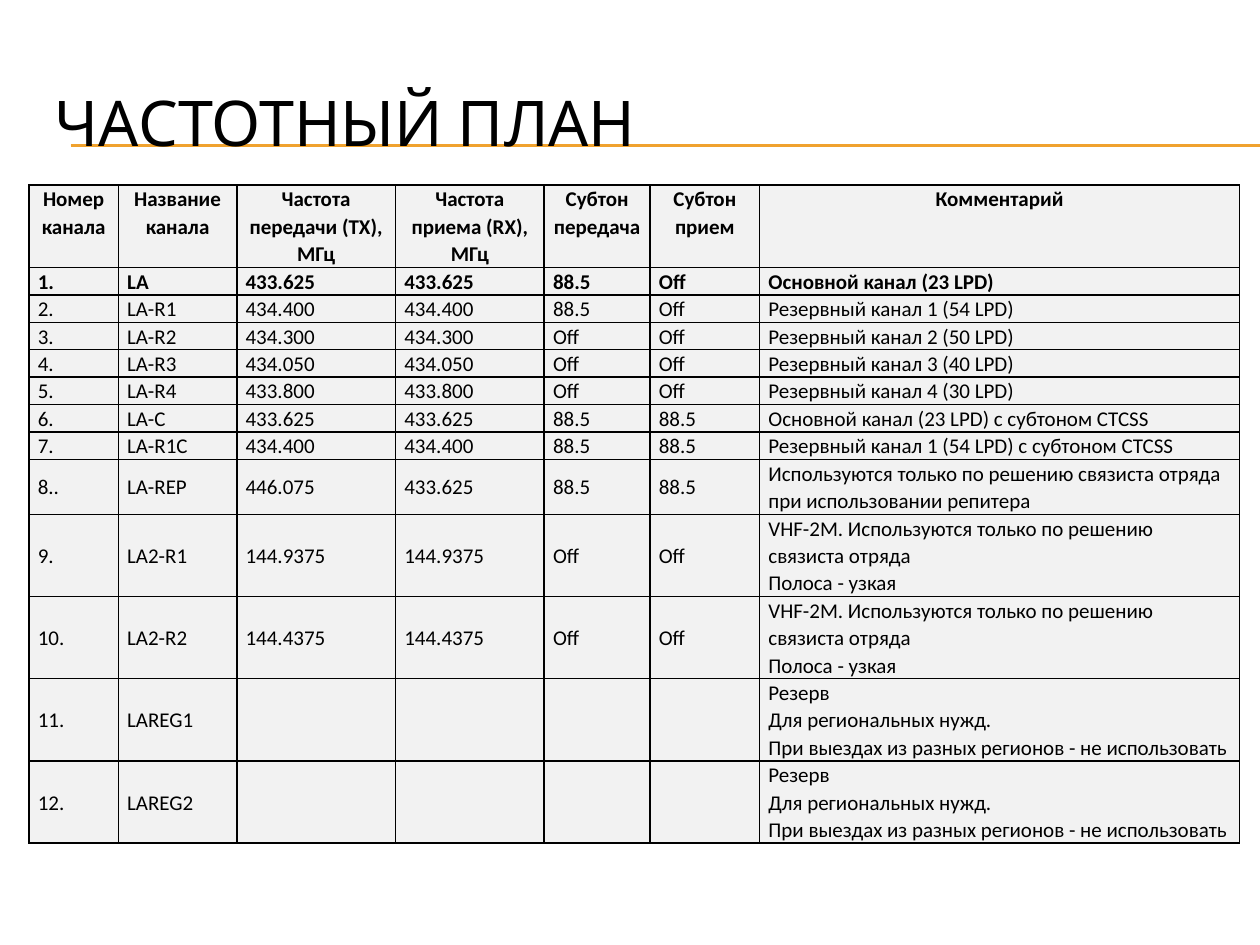
"""Build the radio frequency plan slide: a ruled title over a channel table."""
from dataclasses import dataclass

from lxml import etree
from pptx import Presentation
from pptx import util as u
from pptx.dml.color import RGBColor
from pptx.enum import shapes, text
from pptx.oxml import ns

COLORS = {"ink": "000000", "rule": "F0A22E", "cell": "F2F2F2"}
COL_WIDTHS = (0.71, 0.94, 1.26, 1.18, 0.84, 0.87, 3.81)
ROW_HEIGHT = 0.14
HEADERS = (
    "Номер\nканала", "Название канала", "Частота передачи (TX), МГц",
    "Частота приема (RX), МГц", "Субтон\nпередача", "Субтон\nприем", "Комментарий",
)
VHF = ("VHF-2M. Используются только по решению связиста отряда \nПолоса - узкая",)
RESERVE = ("Резерв", "Для региональных нужд. \nПри выездах из разных регионов - не использовать")


@dataclass(frozen=True)
class Channel:
    """One table row; the comment is a tuple of paragraphs."""
    number: str
    name: str
    tx: str
    rx: str
    tone_tx: str
    tone_rx: str
    comment: tuple[str, ...]

    def cells(self) -> list[tuple[str, ...]]:
        """Return the paragraphs of each cell."""
        values = (self.number, self.name, self.tx, self.rx, self.tone_tx, self.tone_rx)
        return [(v,) for v in values] + [self.comment]


CHANNELS = (
    Channel("1.", "LA", "433.625", "433.625", "88.5", "Off", ("Основной канал (23 LPD)",)),
    Channel("2.", "LA-R1", "434.400", "434.400", "88.5", "Off", ("Резервный канал 1 (54 LPD)",)),
    Channel("3.", "LA-R2", "434.300", "434.300", "Off", "Off", ("Резервный канал 2 (50 LPD)",)),
    Channel("4.", "LA-R3", "434.050", "434.050", "Off", "Off", ("Резервный канал 3 (40 LPD)",)),
    Channel("5.", "LA-R4", "433.800", "433.800", "Off", "Off", ("Резервный канал 4 (30 LPD)",)),
    Channel("6.", "LA-C", "433.625", "433.625", "88.5", "88.5",
            ("Основной канал (23 LPD) с субтоном CTCSS",)),
    Channel("7.", "LA-R1С", "434.400", "434.400", "88.5", "88.5",
            ("Резервный канал 1 (54 LPD) с субтоном CTCSS",)),
    Channel("8..", "LA-REP", "446.075", "433.625", "88.5", "88.5",
            ("Используются только по решению связиста отряда при использовании репитера",)),
    Channel("9.", "LA2-R1", "144.9375", "144.9375", "Off", "Off", VHF),
    Channel("10.", "LA2-R2", "144.4375", "144.4375", "Off", "Off", VHF),
    Channel("11.", "LAREG1", "", "", "", "", RESERVE),
    Channel("12.", "LAREG2", "", "", "", "", RESERVE),
)


def rgb(name: str) -> RGBColor:
    """Look up a named colour."""
    return RGBColor.from_string(COLORS[name])


def add_text(p, content: str, font: str, size: float, bold: bool = False) -> None:
    """Add runs to a paragraph, with a line break at each newline."""
    for i, line in enumerate(content.split("\n")):
        if i:
            p.add_line_break()
        r = p.add_run()
        r.text = line
        r.font.name, r.font.size, r.font.bold = font, u.Pt(size), bold
        r.font.color.rgb = rgb("ink")


def add_rule(s, y: float) -> None:
    """Draw a title rule behind the other shapes."""
    sp = s.shapes.add_connector(
        shapes.MSO_CONNECTOR.STRAIGHT, u.Inches(0.56), u.Inches(y), u.Inches(10), u.Inches(y))
    sp.line.color.rgb = rgb("rule")
    sp.line.width = u.Pt(0.75)
    etree.SubElement(sp._element.spPr, ns.qn("a:effectLst"))
    s.shapes._spTree.insert(2, sp._element)


def add_borders(cell) -> None:
    """Give a cell a one-point line on all sides."""
    tc_pr = cell._tc.get_or_add_tcPr()
    for i, side in enumerate("LRTB"):
        ln = etree.Element(ns.qn(f"a:ln{side}"), w=str(u.Pt(1)))
        fill = etree.SubElement(ln, ns.qn("a:solidFill"))
        etree.SubElement(fill, ns.qn("a:srgbClr"), val=COLORS["ink"])
        tc_pr.insert(i, ln)


def fill_cell(cell, paragraphs: tuple[str, ...], header: bool, bold: bool) -> None:
    """Format a cell and write its paragraphs."""
    cell.fill.solid()
    cell.fill.fore_color.rgb = rgb("cell")
    cell.margin_left = cell.margin_right = u.Inches(0.07)
    cell.margin_top = cell.margin_bottom = 0
    cell.vertical_anchor = text.MSO_ANCHOR.TOP if header else text.MSO_ANCHOR.MIDDLE
    add_borders(cell)
    tf = cell.text_frame
    for i, content in enumerate(paragraphs):
        p = tf.add_paragraph() if i else tf.paragraphs[0]
        p.alignment = text.PP_ALIGN.CENTER if header else text.PP_ALIGN.LEFT
        p.line_spacing = 1.07
        if content:
            add_text(p, content, "Calibri", 12, bold)


def add_channel_table(s) -> None:
    """Add the table of channels under its header row."""
    rows = [[(h,) for h in HEADERS]] + [c.cells() for c in CHANNELS]
    table = s.shapes.add_table(
        len(rows), len(COL_WIDTHS), u.Inches(0.23), u.Inches(1.47),
        u.Inches(sum(COL_WIDTHS)), u.Inches(ROW_HEIGHT * len(rows))).table
    table.horz_banding = False
    for column, width in zip(table.columns, COL_WIDTHS):
        column.width = u.Inches(width)
    for i, row in enumerate(rows):
        table.rows[i].height = u.Inches(ROW_HEIGHT)
        for j, paragraphs in enumerate(row):
            fill_cell(table.cell(i, j), paragraphs, header=i == 0, bold=i < 2)


def add_title(s) -> None:
    """Place and write the slide title."""
    sp = s.shapes.title
    sp.left, sp.top, sp.width, sp.height = map(u.Inches, (0.33, 0.5, 9.5, 0.92))
    tf = sp.text_frame
    tf.word_wrap = True
    tf.vertical_anchor = text.MSO_ANCHOR.MIDDLE
    p = tf.paragraphs[0]
    p.alignment = text.PP_ALIGN.LEFT
    add_text(p, "ЧАСТОТНЫЙ ПЛАН", "Karla", 36)


def main() -> None:
    """Build and save the slide."""
    prs = Presentation()
    prs.slide_width, prs.slide_height = u.Inches(10), u.Inches(7.5)
    s = prs.slides.add_slide(prs.slide_layouts[5])
    for y in (1.15, 1.16):
        add_rule(s, y)
    add_title(s)
    add_channel_table(s)
    prs.save("out.pptx")


if __name__ == "__main__":
    main()
